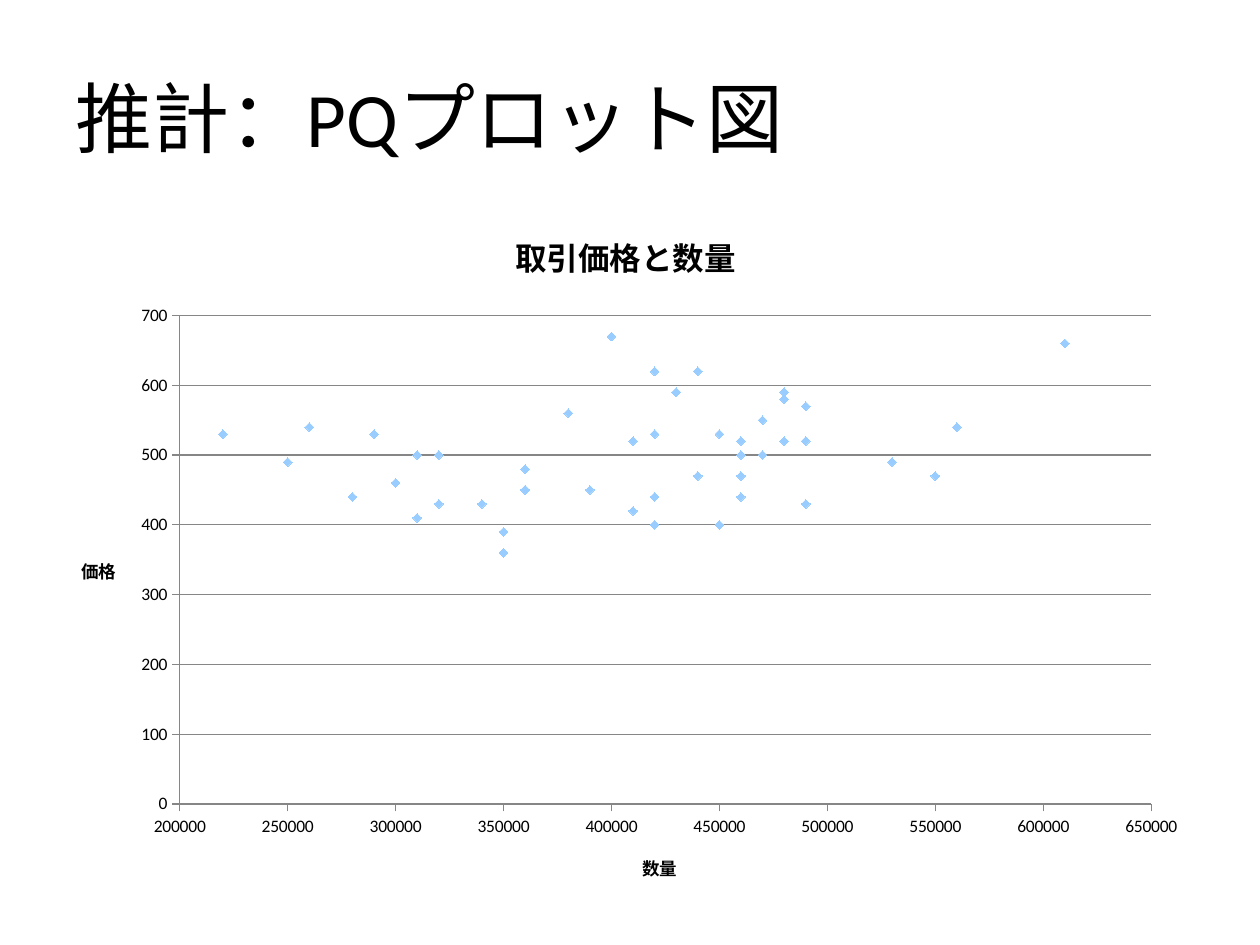
from lxml import etree
from pptx import Presentation
from pptx.chart.data import XyChartData
from pptx.dml.color import RGBColor
from pptx.enum.chart import XL_CHART_TYPE, XL_MARKER_STYLE, XL_TICK_MARK
from pptx.enum.text import MSO_ANCHOR, PP_ALIGN
from pptx.oxml.ns import qn
from pptx.util import Cm, Pt

SCATTER = XL_CHART_TYPE.XY_SCATTER
DIAMOND = XL_MARKER_STYLE.DIAMOND
OUT, NONE = XL_TICK_MARK.OUTSIDE, XL_TICK_MARK.NONE
LEFT, MIDDLE = PP_ALIGN.LEFT, MSO_ANCHOR.MIDDLE

FONT, BLACK, GREY, BLUE = "Calibri", "000000", "868686", "99CCFF"
HEAD = "推計：PQプロット図"
NAME = "取引価格と数量"
AXES = {"数量": (200000, 650000, 50000), "価格": (0, 700, 100)}
PLOT = {"x": 0.11, "y": 0.16, "w": 0.85, "h": 0.7}
AMOUNTS = [
    250000, 260000, 220000, 310000, 360000, 350000, 350000, 390000,
    340000, 320000, 310000, 280000, 300000, 290000, 320000, 360000,
    360000, 420000, 450000, 490000, 420000, 410000, 420000, 460000,
    490000, 460000, 480000, 450000, 460000, 550000, 530000, 560000,
    460000, 440000, 470000, 430000, 420000, 400000, 480000, 380000,
    470000, 420000, 430000, 610000, 410000, 440000, 490000, 480000,
]
PRICES = [
    490, 540, 530, 500, 450, 360, 390, 450, 430, 430, 410, 440,
    460, 530, 500, 480, 450, 400, 400, 430, 400, 420, 440, 470,
    520, 500, 520, 530, 520, 470, 490, 540, 440, 470, 500, 590,
    620, 670, 590, 560, 550, 530, 590, 660, 520, 620, 570, 580,
]


def paint(fill, code):
    fill.solid()
    fill.fore_color.rgb = RGBColor.from_string(code)


def style(font, size, bold=False):
    font.name, font.size, font.bold = FONT, Pt(size), bold
    paint(font.fill, BLACK)


def write(frame, text, size, bold=False):
    run = frame.paragraphs[0].add_run()
    run.text = text
    style(run.font, size, bold)


def rule(line):
    paint(line.fill, GREY)
    line.width = Pt(0.75)


def set_axis(axis, text, scale):
    axis.minimum_scale, axis.maximum_scale, axis.major_unit = scale
    axis.major_tick_mark, axis.minor_tick_mark = OUT, NONE
    axis.tick_labels.number_format = "0"
    axis.tick_labels.number_format_is_linked = False
    rule(axis.format.line)
    write(axis.axis_title.text_frame, text, 10, True)


def level_text(chart):
    for body in chart.element.iter(qn("a:bodyPr")):
        body.set("rot", "0")


def place_plot(chart):
    area = next(chart.element.iter(qn("c:plotArea")))
    for old in area.findall(qn("c:layout")):
        area.remove(old)
    layout = etree.Element(qn("c:layout"))
    area.insert(0, layout)
    manual = etree.SubElement(layout, qn("c:manualLayout"))
    parts = [("layoutTarget", "inner"), ("xMode", "edge"), ("yMode", "edge")]
    for tag, val in parts + list(PLOT.items()):
        etree.SubElement(manual, qn("c:" + tag)).set("val", str(val))


def add_plot(slide):
    data = XyChartData()
    dots = data.add_series("Series 1")
    for amount, price in zip(AMOUNTS, PRICES):
        dots.add_data_point(amount, price)
    chart = slide.shapes.add_chart(
        SCATTER, Cm(1.09), Cm(4.11), Cm(23.04), Cm(14.07), data).chart
    style(chart.font, 10)
    chart.has_legend = False
    write(chart.chart_title.text_frame, NAME, 18, True)
    pair = chart.category_axis, chart.value_axis
    for axis, (text, scale) in zip(pair, AXES.items()):
        set_axis(axis, text, scale)
    pair[0].has_major_gridlines = False
    pair[1].has_major_gridlines = True
    rule(pair[1].major_gridlines.format.line)
    plot = chart.plots[0]
    plot.vary_by_categories = False
    series = plot.series[0]
    series.format.line.fill.background()
    mark = series.marker
    mark.style, mark.size = DIAMOND, 5
    paint(mark.format.fill, BLUE)
    paint(mark.format.line.fill, BLUE)
    level_text(chart)
    place_plot(chart)


def main():
    deck = Presentation()
    deck.slide_width, deck.slide_height = Cm(25.4), Cm(19.05)
    slide = deck.slides.add_slide(deck.slide_layouts[5])
    title = slide.shapes.title
    title.left, title.top = Cm(1.27), Cm(0.76)
    title.width, title.height = Cm(22.86), Cm(3.18)
    frame = title.text_frame
    frame.vertical_anchor = MIDDLE
    write(frame, HEAD, 44)
    frame.paragraphs[0].alignment = LEFT
    add_plot(slide)
    deck.save("out.pptx")


if __name__ == "__main__":
    main()
